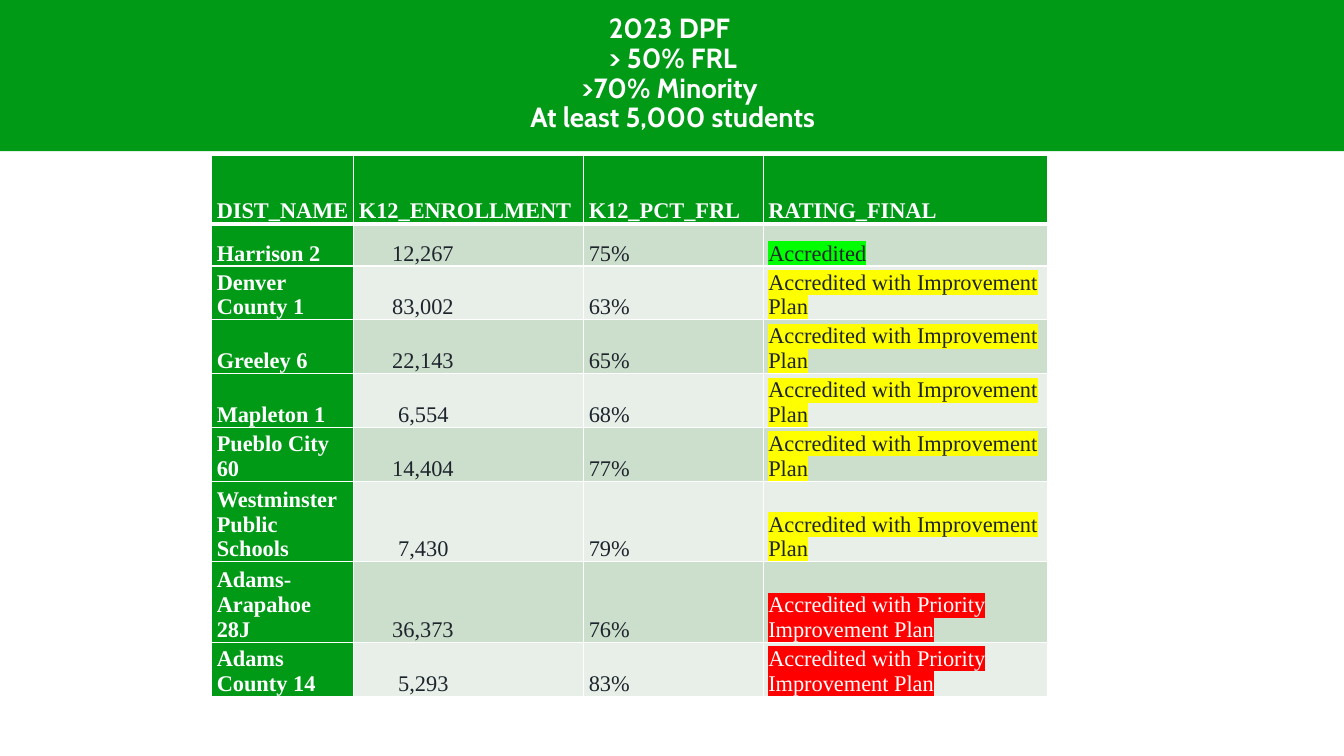
from dataclasses import dataclass
from typing import Optional

import lxml.etree
import pptx
import pptx.dml.color
import pptx.enum.shapes
import pptx.enum.text
import pptx.oxml.ns
import pptx.util

Inches, Pt = pptx.util.Inches, pptx.util.Pt
RGBColor = pptx.dml.color.RGBColor
qn = pptx.oxml.ns.qn

GREEN = RGBColor(0x00, 0x9A, 0x17)
WHITE = RGBColor(0xFF, 0xFF, 0xFF)
INK = RGBColor(0x1D, 0x24, 0x2C)
BANDS = (RGBColor(0xCC, 0xDE, 0xCC), RGBColor(0xE7, 0xEF, 0xE8))
LIME = RGBColor(0x00, 0xFF, 0x00)
YELLOW = RGBColor(0xFF, 0xFF, 0x00)
RED = RGBColor(0xFF, 0x00, 0x00)

TITLE = ("2023 DPF ", "> 50% FRL", ">70% Minority ", "At least 5,000 students")
HEADERS = ("DIST_NAME", "K12_ENROLLMENT", "K12_PCT_FRL", "RATING_FINAL")
COL_WIDTHS = (1.41, 2.28, 1.78, 2.82)


@dataclass(frozen=True)
class Rating:
    label: str
    highlight: RGBColor
    color: RGBColor = INK


@dataclass(frozen=True)
class District:
    name: str
    enrollment: int
    frl: int
    rating: Rating
    height: float = 0.42


ACCREDITED = Rating("Accredited", LIME)
IMPROVEMENT = Rating("Accredited with Improvement Plan", YELLOW)
PRIORITY = Rating("Accredited with Priority Improvement Plan", RED, WHITE)

DISTRICTS = (
    District("Harrison 2", 12267, 75, ACCREDITED),
    District("Denver County 1", 83002, 63, IMPROVEMENT),
    District("Greeley 6", 22143, 65, IMPROVEMENT),
    District("Mapleton 1", 6554, 68, IMPROVEMENT),
    District("Pueblo City 60", 14404, 77, IMPROVEMENT),
    District("Westminster Public Schools", 7430, 79, IMPROVEMENT, 0.74),
    District("Adams-Arapahoe 28J", 36373, 76, PRIORITY),
    District("Adams County 14", 5293, 83, PRIORITY),
)


def add_run(p, text: str, font: str, size: float, color: RGBColor,
            bold: bool = False, highlight: Optional[RGBColor] = None) -> None:
    r = p.add_run()
    r.text = text
    r.font.size, r.font.bold = Pt(size), bold
    r.font.color.rgb = color
    if highlight is not None:
        mark = lxml.etree.SubElement(r.font._element, qn("a:highlight"))
        lxml.etree.SubElement(mark, qn("a:srgbClr"), val=str(highlight))
    r.font.name = font


def set_borders(cell, top: float = 1, bottom: float = 1) -> None:
    tc_pr = cell._tc.get_or_add_tcPr()
    for side, width in (("L", 1), ("R", 1), ("T", top), ("B", bottom)):
        ln = lxml.etree.SubElement(tc_pr, qn(f"a:ln{side}"), w=str(Pt(width)))
        fill = lxml.etree.SubElement(ln, qn("a:solidFill"))
        lxml.etree.SubElement(fill, qn("a:srgbClr"), val=str(WHITE))


def fill_cell(cell, text: str, fill: RGBColor, color: RGBColor = INK,
              bold: bool = False, highlight: Optional[RGBColor] = None,
              left: float = 0.05, top: float = 1, bottom: float = 1) -> None:
    set_borders(cell, top, bottom)
    cell.fill.solid()
    cell.fill.fore_color.rgb = fill
    cell.margin_left, cell.margin_right = Inches(left), Inches(0.05)
    cell.margin_top = cell.margin_bottom = 0
    cell.vertical_anchor = pptx.enum.text.MSO_ANCHOR.BOTTOM
    add_run(cell.text_frame.paragraphs[0], text, "Times New Roman", 16,
            color, bold, highlight)


def add_title(s) -> None:
    # Green band
    sp = s.shapes.add_shape(pptx.enum.shapes.MSO_SHAPE.RECTANGLE,
                            0, 0, Inches(13.33), Inches(1.5))
    sp.shadow.inherit = False
    sp.fill.solid()
    sp.fill.fore_color.rgb = GREEN
    sp.line.fill.background()

    # Title lines
    tf = s.shapes.add_textbox(Inches(0.92), Inches(0.17),
                              Inches(11.5), Inches(1.13)).text_frame
    tf.word_wrap = True
    tf.margin_top = tf.margin_bottom = 0
    tf.vertical_anchor = pptx.enum.text.MSO_ANCHOR.MIDDLE
    for i, line in enumerate(TITLE):
        p = tf.add_paragraph() if i else tf.paragraphs[0]
        p.alignment = pptx.enum.text.PP_ALIGN.CENTER
        p.line_spacing = 0.9
        add_run(p, line, "Cabin", 19.8, WHITE, bold=True)


def add_district_table(s) -> None:
    table = s.shapes.add_table(len(DISTRICTS) + 1, len(HEADERS), Inches(2.1),
                               Inches(1.54), Inches(8.29), Inches(4.36)).table
    for column, width in zip(table.columns, COL_WIDTHS):
        column.width = Inches(width)

    # Header row
    table.rows[0].height = Inches(0.68)
    for col, header in enumerate(HEADERS):
        fill_cell(table.cell(0, col), header, GREEN, WHITE, True, bottom=3)

    # District rows, with shorter enrollment figures set further in
    for row, d in enumerate(DISTRICTS, start=1):
        table.rows[row].height = Inches(d.height)
        band = BANDS[(row - 1) % 2]
        top = 3 if row == 1 else 1
        indent = 0.38 if d.enrollment >= 10000 else 0.44
        name, enrollment, frl, rating = (table.cell(row, c) for c in range(4))
        fill_cell(name, d.name, GREEN, WHITE, True, top=top)
        fill_cell(enrollment, f"{d.enrollment:,}", band, left=indent, top=top)
        fill_cell(frl, f"{d.frl}%", band, top=top)
        fill_cell(rating, d.rating.label, band, d.rating.color,
                  highlight=d.rating.highlight, top=top)


def main() -> None:
    prs = pptx.Presentation()
    prs.slide_width, prs.slide_height = Inches(13.33), Inches(7.5)
    s = prs.slides.add_slide(prs.slide_layouts[6])
    add_title(s)
    add_district_table(s)
    prs.save("out.pptx")


if __name__ == "__main__":
    main()
